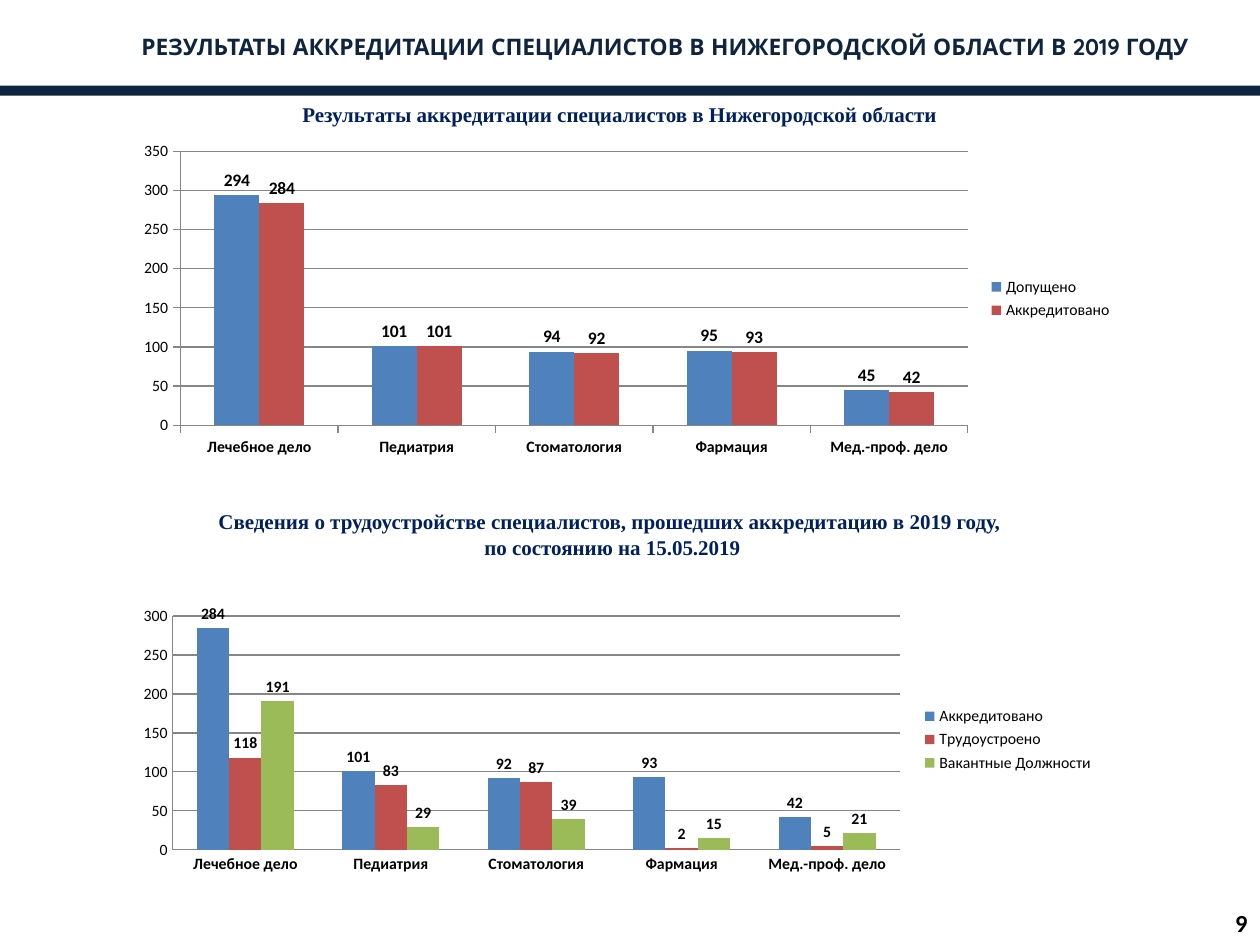
from dataclasses import dataclass

from lxml import etree
from pptx import Presentation
from pptx.chart.data import CategoryChartData
from pptx.dml.color import RGBColor
from pptx.enum.chart import XL_CHART_TYPE, XL_LABEL_POSITION, XL_LEGEND_POSITION, XL_TICK_MARK
from pptx.enum.shapes import MSO_SHAPE
from pptx.enum.text import MSO_ANCHOR, MSO_AUTO_SIZE, PP_ALIGN
from pptx.util import Inches, Pt

COLUMN = XL_CHART_TYPE.COLUMN_CLUSTERED
ABOVE = XL_LABEL_POSITION.OUTSIDE_END
SIDE = XL_LEGEND_POSITION.RIGHT
OUT, NONE = XL_TICK_MARK.OUTSIDE, XL_TICK_MARK.NONE
RECT = MSO_SHAPE.RECTANGLE
TOP, MIDDLE = MSO_ANCHOR.TOP, MSO_ANCHOR.MIDDLE
GROW, FIXED = MSO_AUTO_SIZE.SHAPE_TO_FIT_TEXT, MSO_AUTO_SIZE.NONE
CENTER, RIGHT = PP_ALIGN.CENTER, PP_ALIGN.RIGHT

CELL = 0.1  # inches; the slide is 100 columns by 75 rows
COLS, ROWS = 100, 75


@dataclass(frozen=True)
class Font:
    name: str
    size: float
    color: str
    bold: bool = True


@dataclass(frozen=True)
class Theme:
    bar: str = "0F243E"
    grid: str = "868686"
    fills: tuple[str, ...] = ("4F81BD", "C0504D", "9BBB59")
    title: Font = Font("Quicksand", 13, "0F243E")
    head: Font = Font("Times New Roman", 12, "002060")
    page: Font = Font("Calibri", 14, "000000")
    value: Font = Font("Calibri", 10, "000000")
    small: Font = Font("Calibri", 9, "000000")
    plain: Font = Font("Calibri", 9, "000000", False)


@dataclass(frozen=True)
class Box:
    col: float
    row: float
    cols: float
    rows: float

    def place(self) -> list[int]:
        return [Inches(n * CELL) for n in (self.col, self.row, self.cols, self.rows)]


@dataclass(frozen=True)
class Label:
    box: Box
    lines: tuple[str, ...]
    font: Font
    align: PP_ALIGN = CENTER
    anchor: MSO_ANCHOR = TOP
    fit: MSO_AUTO_SIZE = GROW


@dataclass(frozen=True)
class Graph:
    box: Box
    plot: Box  # shares of the chart's size
    series: dict[str, tuple[int, ...]]
    top: int
    tick: XL_TICK_MARK
    font: Font


THEME = Theme()
FIELDS = ("Лечебное дело", "Педиатрия", "Стоматология", "Фармация", "Мед.-проф. дело")
PASSED = (284, 101, 92, 93, 42)

LABELS = (
    Label(Box(6.7, 2.1, 92.1, 3.2),
          ("РЕЗУЛЬТАТЫ АККРЕДИТАЦИИ СПЕЦИАЛИСТОВ В НИЖЕГОРОДСКОЙ ОБЛАСТИ В 2019 ГОДУ",),
          THEME.title),
    Label(Box(12.2, 7.6, 74, 3),
          ("Результаты аккредитации специалистов в Нижегородской области",), THEME.head),
    Label(Box(11.4, 39.9, 74, 5),
          ("Сведения о трудоустройстве специалистов, прошедших аккредитацию в 2019 году,",
           " по состоянию на 15.05.2019"), THEME.head),
    Label(Box(76.7, 71.4, 23.3, 3.6), ("9",), THEME.page, RIGHT, MIDDLE, FIXED),
)

GRAPHS = (
    Graph(Box(9.8, 10.7, 79.5, 26), Box(0.057, 0.05, 0.786, 0.837),
          {"Допущено": (294, 101, 94, 95, 45), "Аккредитовано": PASSED},
          350, OUT, THEME.value),
    Graph(Box(9.8, 47.7, 78, 22), Box(0.05, 0.054, 0.74, 0.844),
          {"Аккредитовано": PASSED, "Трудоустроено": (118, 83, 87, 2, 5),
           "Вакантные Должности": (191, 29, 39, 15, 21)},
          300, NONE, THEME.small),
)


def style(target, font: Font) -> None:
    target.name, target.size, target.bold = font.name, Pt(font.size), font.bold
    target.color.rgb = RGBColor.from_string(font.color)


def write(slide, label: Label) -> None:
    frame = slide.shapes.add_textbox(*label.box.place()).text_frame
    frame.word_wrap = True
    frame.auto_size = label.fit
    frame.vertical_anchor = label.anchor
    for i, line in enumerate(label.lines):
        para = frame.add_paragraph() if i else frame.paragraphs[0]
        para.alignment = label.align
        run = para.add_run()
        run.text = line
        style(run.font, label.font)


def fix_plot(chart, plot: Box) -> None:
    """Pin the inner plot area to the given shares of the chart."""
    area = chart.plots[0]._element.getparent()
    space = "{" + area.nsmap["c"] + "}"
    for old in area.findall(space + "layout"):
        area.remove(old)
    layout = etree.Element(space + "layout")
    area.insert(0, layout)
    manual = etree.SubElement(layout, space + "manualLayout")
    parts = {"layoutTarget": "inner", "xMode": "edge", "yMode": "edge",
             "x": plot.col, "y": plot.row, "w": plot.cols, "h": plot.rows}
    for tag, val in parts.items():
        etree.SubElement(manual, space + tag).set("val", str(val))


def draw(slide, graph: Graph) -> None:
    data = CategoryChartData()
    data.categories = FIELDS
    for name, vals in graph.series.items():
        data.add_series(name, vals)
    chart = slide.shapes.add_chart(COLUMN, *graph.box.place(), data).chart
    chart.has_title = False
    style(chart.font, THEME.plain)
    chart.has_legend = True
    chart.legend.position = SIDE
    chart.legend.include_in_layout = False
    style(chart.legend.font, THEME.plain)

    # Axes and grid lines
    cat, val = chart.category_axis, chart.value_axis
    val.minimum_scale, val.maximum_scale, val.major_unit = 0, graph.top, 50
    val.has_major_gridlines = True
    for axis, font in ((cat, THEME.small), (val, THEME.plain)):
        axis.major_tick_mark, axis.minor_tick_mark = graph.tick, NONE
        style(axis.tick_labels.font, font)
    for part in (cat, val, val.major_gridlines):
        part.format.line.color.rgb = RGBColor.from_string(THEME.grid)
        part.format.line.width = Pt(0.75)

    # Columns and their values
    plot = chart.plots[0]
    plot.gap_width, plot.overlap, plot.vary_by_categories = 150, 0, False
    for row, fill in zip(plot.series, THEME.fills):
        row.format.fill.solid()
        row.format.fill.fore_color.rgb = RGBColor.from_string(fill)
        tags = row.data_labels
        tags.show_value, tags.position = True, ABOVE
        style(tags.font, graph.font)
    fix_plot(chart, graph.plot)


def rule(slide, box: Box) -> None:
    bar = slide.shapes.add_shape(RECT, *box.place())
    bar.shadow.inherit = False
    bar.fill.solid()
    bar.fill.fore_color.rgb = RGBColor.from_string(THEME.bar)
    bar.line.fill.background()


def main() -> None:
    deck = Presentation()
    deck.slide_width, deck.slide_height = Inches(COLS * CELL), Inches(ROWS * CELL)
    slide = deck.slides.add_slide(deck.slide_layouts[6])
    for graph in GRAPHS:
        draw(slide, graph)
    rule(slide, Box(0, 6.8, COLS, 0.8))
    for label in LABELS:
        write(slide, label)
    deck.save("out.pptx")


if __name__ == "__main__":
    main()
